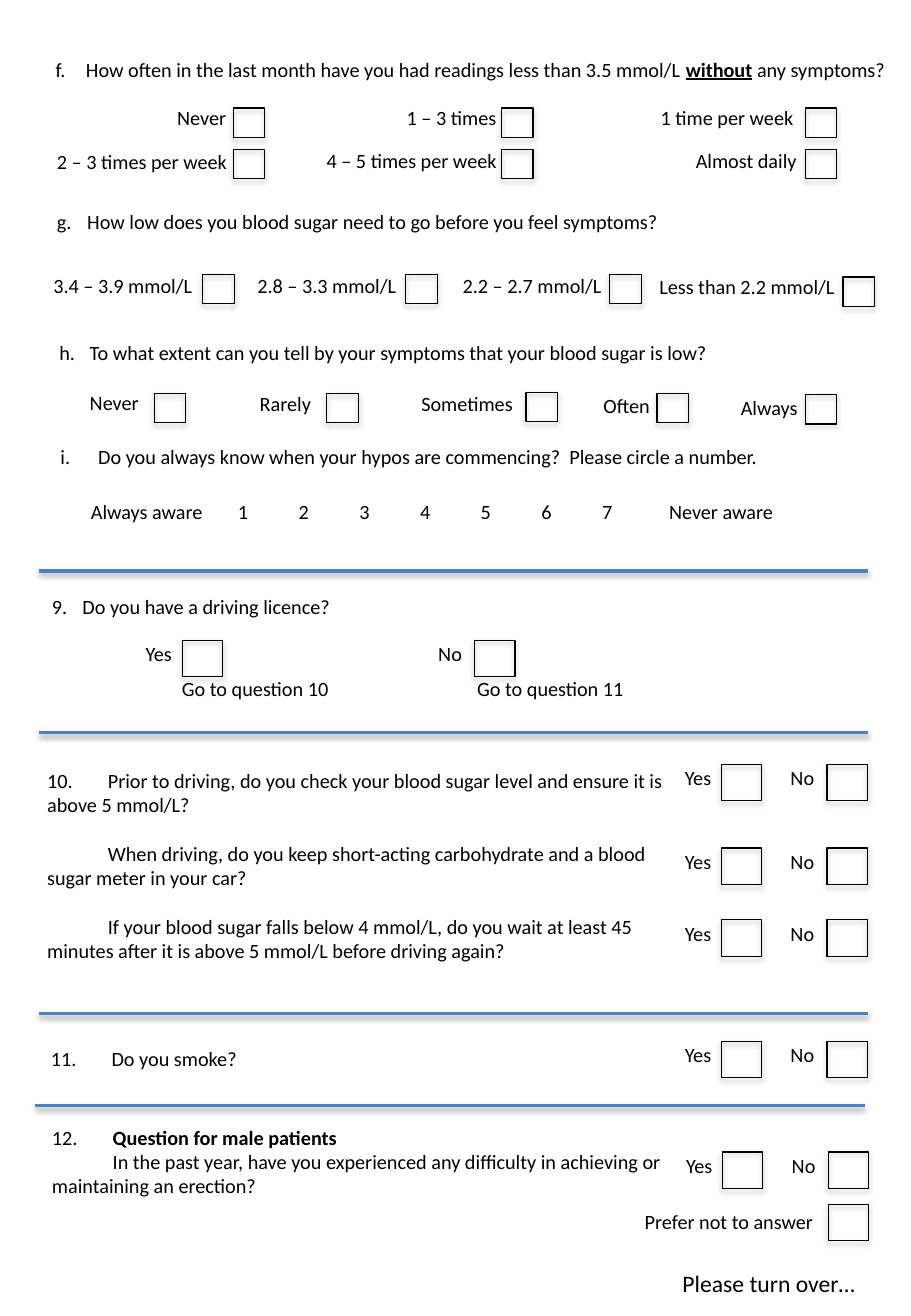
from dataclasses import dataclass, field
from typing import NamedTuple

from pptx import Presentation, util as u
from pptx.dml.color import RGBColor
from pptx.enum import shapes, text
from pptx.oxml import parse_xml
from pptx.oxml.ns import nsdecls
from pptx.oxml.xmlchemy import OxmlElement

PX = 9144
LINE_H = 30


@dataclass(frozen=True)
class Theme:
    ink: RGBColor = RGBColor(0x00, 0x00, 0x00)
    rule: RGBColor = RGBColor(0x4F, 0x81, 0xBD)
    font: str = "Calibri"
    body: float = 12
    footer: float = 14
    gap: float = 14.6
    box_line: float = 0.75
    rule_line: float = 2


THEME = Theme()


class Run(NamedTuple):
    words: str
    style: dict = {}


class Para(NamedTuple):
    runs: list[Run]
    indent: int = 0
    gap: float = 0


class Question(NamedTuple):
    x: int
    y: int
    w: int
    scheme: str
    start: int
    hang: int
    runs: list[Run]


class Option(NamedTuple):
    label: str
    x: int
    y: int
    w: int
    box_x: int
    box_y: int


class Note(NamedTuple):
    x: int
    y: int
    w: int
    h: int
    paras: list[Para]
    size: float = THEME.body
    wrap: bool = True


@dataclass(frozen=True)
class YesNo:
    x: int
    y: int
    step: int = 87
    labels: list[str] = field(default_factory=lambda: ["Yes", "No"])


BOLD = {"bold": True}
SMALL_BOX = (26, 24)
LARGE_BOX = (33, 30)

QUESTIONS = [
    Question(36, 42, 706, "alphaLcPeriod", 6, 25, [
        Run("How often in the last month have you had readings less than 3.5 mmol/L "),
        Run("without", {"bold": True, "underline": True}),
        Run(" any symptoms?")]),
    Question(37, 167, 706, "alphaLcPeriod", 7, 25, [
        Run("How low does you blood sugar need to go before you feel symptoms?")]),
    Question(39, 275, 706, "alphaLcPeriod", 8, 25, [
        Run("To what extent can you tell by your symptoms that your blood sugar is low?")]),
    Question(40, 361, 706, "romanLcPeriod", 1, 31, [
        Run("Do you always know when your hypos are commencing?  Please circle a number.")]),
    Question(33, 484, 683, "arabicPeriod", 9, 25, [Run("Do you have a driving licence?")]),
]

OPTIONS = [
    Option("Never", 136, 82, 68, 192, 89),
    Option("1 – 3 times", 325, 82, 100, 413, 89),
    Option("1 time per week", 534, 82, 195, 663, 89),
    Option("2 – 3 times per week", 37, 118, 162, 192, 123),
    Option("4 – 5 times per week", 259, 117, 162, 413, 123),
    Option("Almost daily", 563, 117, 156, 663, 123),
    Option("3.4 – 3.9 mmol/L", 34, 220, 151, 167, 226),
    Option("2.8 – 3.3 mmol/L", 202, 220, 144, 334, 226),
    Option("2.2 – 2.7 mmol/L", 371, 220, 140, 502, 226),
    Option("Less than 2.2 mmol/L", 533, 221, 195, 694, 228),
    Option("Never", 64, 316, 151, 127, 324),
    Option("Rarely", 204, 317, 144, 269, 324),
    Option("Sometimes", 337, 317, 97, 433, 323),
    Option("Often", 487, 319, 67, 541, 324),
    Option("Always", 600, 320, 68, 663, 325),
]

YES_NO = [YesNo(110, 523, 241), YesNo(554, 625), YesNo(554, 694),
          YesNo(554, 753), YesNo(554, 853), YesNo(555, 944)]

NOTES = [
    Note(65, 406, 151, LINE_H, [Para([Run("Always aware")])]),
    Note(186, 406, 340, LINE_H, [Para([Run("\t".join(map(str, range(1, 8))))])]),
    Note(541, 406, 127, LINE_H, [Para([Run("Never aware")])]),
    Note(140, 552, 154, LINE_H, [Para([Run("Go to question 10")])]),
    Note(383, 552, 154, LINE_H, [Para([Run("Go to question 11")])]),
    Note(29, 627, 533, 172, [
        Para([Run("10.\tPrior to driving, do you check your blood sugar level "
                  "and ensure it is above 5 mmol/L?")]),
        Para([Run("When driving, do you keep short-acting carbohydrate and a blood "
                  "sugar meter in your car?")], 50, THEME.gap),
        Para([Run("If your blood sugar falls below 4 mmol/L, do you wait at least 45 "
                  "minutes after it is above 5 mmol/L before driving again?")], 50, THEME.gap)]),
    Note(32, 856, 533, LINE_H, [Para([Run("11.\tDo you smoke?")])]),
    Note(33, 921, 533, 71, [
        Para([Run("12.\t"), Run("Question for male patients", BOLD)]),
        Para([Run("In the past year, have you experienced any difficulty in achieving or "
                  "maintaining an erection?")], 50)]),
    Note(552, 1039, 164, 34, [Para([Run("Please turn over…")])], THEME.footer, False),
]

RULES = [(32, 470), (32, 603), (32, 834), (29, 910)]
RULE_W = 683


def px(*values: int) -> list[int]:
    return [u.Emu(v * PX) for v in values]


def add_shadow(sp, dist: int, alpha: int) -> None:
    for old in sp._element.spPr.findall(".//{*}effectLst"):
        sp._element.spPr.remove(old)
    sp._element.spPr.append(parse_xml(
        f'<a:effectLst {nsdecls("a")}><a:outerShdw blurRad="40000" dist="{dist}" '
        f'dir="5400000" rotWithShape="0"><a:srgbClr val="{THEME.ink}">'
        f'<a:alpha val="{alpha}"/></a:srgbClr></a:outerShdw></a:effectLst>'))


def add_note(slide, note: Note):
    sp = slide.shapes.add_textbox(*px(note.x, note.y, note.w, note.h))
    tf = sp.text_frame
    tf.word_wrap = note.wrap
    tf.auto_size = text.MSO_AUTO_SIZE.SHAPE_TO_FIT_TEXT
    for i, para in enumerate(note.paras):
        p = tf.add_paragraph() if i else tf.paragraphs[0]
        if para.gap:
            p.space_before = u.Pt(para.gap)
        if para.indent:
            p._p.get_or_add_pPr().set("indent", str(para.indent * PX))
        for words, style in para.runs:
            r = p.add_run()
            r.text = words
            formats = {"name": THEME.font, "size": u.Pt(note.size), **style}
            for name, value in formats.items():
                setattr(r.font, name, value)
            r.font.color.rgb = THEME.ink
    return sp


def add_label(slide, label: str, x: int, y: int, w: int) -> None:
    add_note(slide, Note(x, y, w, LINE_H, [Para([Run(label)])]))


def add_question(slide, q: Question) -> None:
    sp = add_note(slide, Note(q.x, q.y, q.w, LINE_H, [Para(q.runs, -q.hang)]))
    pPr = sp.text_frame.paragraphs[0]._p.get_or_add_pPr()
    pPr.set("marL", str(q.hang * PX))
    number = OxmlElement("a:buAutoNum")
    number.set("type", q.scheme)
    number.set("startAt", str(q.start))
    pPr.append(number)


def add_box(slide, x: int, y: int, size: tuple[int, int]) -> None:
    sp = slide.shapes.add_shape(shapes.MSO_SHAPE.RECTANGLE, *px(x, y, *size))
    sp.fill.background()
    sp.line.color.rgb = THEME.ink
    sp.line.width = u.Pt(THEME.box_line)
    add_shadow(sp, 23000, 35000)


def add_yes_no(slide, row: YesNo) -> None:
    for i, label in enumerate(row.labels):
        x = row.x + i * row.step
        add_label(slide, label, x, row.y, 73)
        add_box(slide, x + 40, row.y + 4, LARGE_BOX)


def add_rule(slide, x: int, y: int) -> None:
    sp = slide.shapes.add_connector(shapes.MSO_CONNECTOR.STRAIGHT, *px(x, y, x + RULE_W, y))
    sp.line.color.rgb = THEME.rule
    sp.line.width = u.Pt(THEME.rule_line)
    add_shadow(sp, 20000, 38000)


def main() -> None:
    prs = Presentation()
    prs.slide_width, prs.slide_height = px(750, 1083)
    slide = prs.slides.add_slide(prs.slide_layouts[6])
    for q in QUESTIONS:
        add_question(slide, q)
    for o in OPTIONS:
        add_label(slide, o.label, o.x, o.y, o.w)
        add_box(slide, o.box_x, o.box_y, SMALL_BOX)
    for row in YES_NO:
        add_yes_no(slide, row)
    add_label(slide, "Prefer not to answer", 521, 990, 186)
    add_box(slide, 682, 991, LARGE_BOX)
    for note in NOTES:
        add_note(slide, note)
    for x, y in RULES:
        add_rule(slide, x, y)
    prs.save("out.pptx")


if __name__ == "__main__":
    main()
